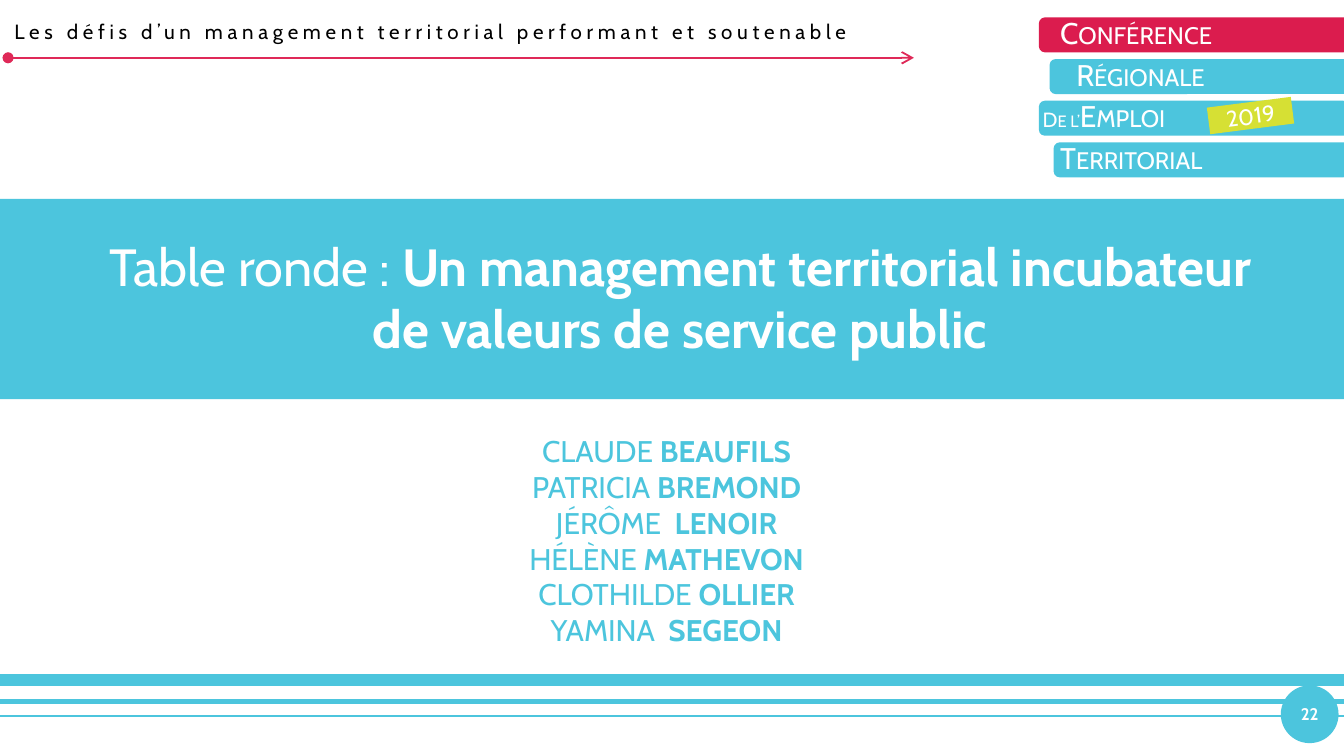
import pptx
import pptx.dml.color
import pptx.enum.shapes
import pptx.enum.text
import pptx.oxml.ns
import pptx.util
from dataclasses import dataclass
from lxml import etree

Inches = pptx.util.Inches
Shape = pptx.enum.shapes.MSO_SHAPE
Align = pptx.enum.text.PP_ALIGN
Anchor = pptx.enum.text.MSO_ANCHOR
qn = pptx.oxml.ns.qn


@dataclass(frozen=True)
class Theme:
    font: str = "Cabin"
    blue: str = "4CC5DD"
    red: str = "DB1C4E"
    arrow: str = "DF2958"
    lime: str = "D6E034"
    white: str = "FFFFFF"
    black: str = "000000"
    title: float = 28
    body: float = 16
    badge: float = 12
    small: float = 11
    number: float = 9


theme = Theme()


def write(para, parts, color, align=Align.LEFT, **attributes):
    """Fill a paragraph with (text, size, bold) spans."""
    para.alignment = align
    para.space_before = pptx.util.Pt(0)
    for text, size, bold in parts:
        span = para.add_run()
        span.text = text
        span.font.name = theme.font
        span.font.size = pptx.util.Pt(size)
        span.font.bold = bold
        span.font.color.rgb = pptx.dml.color.RGBColor.from_string(color)
        for name, value in attributes.items():
            span.font._element.set(name, value)


def add_block(kind, left, top, width, height, color):
    """Add a flat filled shape without an outline."""
    block = page.shapes.add_shape(
        kind, Inches(left), Inches(top), Inches(width), Inches(height))
    block.shadow.inherit = False
    block.fill.solid()
    block.fill.fore_color.rgb = pptx.dml.color.RGBColor.from_string(color)
    block.line.fill.background()
    return block


# Widescreen page, 16:9
deck = pptx.Presentation()
deck.slide_width, deck.slide_height = Inches(10), Inches(10 * 9 / 16)
page = deck.slides.add_slide(deck.slide_layouts[1])
title, speakers = page.shapes.title, page.placeholders[1]

# Footer rules and header arrow
rules = [
    (-0.12, 10.2, 5.06, 6, theme.blue),
    (-0.28, 10.04, 5.22, 2.25, theme.blue),
    (-0.11, 10.21, 5.33, 1, theme.blue),
    (0.06, 6.8, 0.43, 1, theme.arrow),
]
for start, end, y, weight, color in rules:
    rule = page.shapes.add_connector(
        pptx.enum.shapes.MSO_CONNECTOR.STRAIGHT,
        Inches(start), Inches(y), Inches(end), Inches(y))
    rule.line.width = pptx.util.Pt(weight)
    rule.line.color.rgb = pptx.dml.color.RGBColor.from_string(color)
    if color == theme.arrow:
        outline = rule.line._get_or_add_ln()
        etree.SubElement(outline, qn("a:headEnd"), type="oval")
        etree.SubElement(outline, qn("a:tailEnd"), type="arrow")
    etree.SubElement(rule._element.spPr, qn("a:effectLst"))

# Title band
band = add_block(Shape.ROUNDED_RECTANGLE, -0.35, 1.48, 10.71, 1.49, theme.blue)
band.adjustments[0] = 0.08

# Title and speakers, brought in front of the band
for holder, left, top, width, height in [
    (title, 0.56, 1.69, 9, 1.04),
    (speakers, 0.27, 3.17, 9.38, 1.85),
]:
    holder.left, holder.top = Inches(left), Inches(top)
    holder.width, holder.height = Inches(width), Inches(height)
    holder.text_frame.word_wrap = True
    holder.text_frame.auto_size = pptx.enum.text.MSO_AUTO_SIZE.NONE
    holder.text_frame.vertical_anchor = Anchor.TOP
    page.shapes.element.append(holder.element)

write(title.text_frame.paragraphs[0], [
    ("Table ronde : ", theme.title, False),
    ("Un management territorial incubateur de valeurs de service public",
     theme.title, True),
], theme.white, Align.CENTER)

names = [
    ("CLAUDE ", "BEAUFILS"),
    ("PATRICIA ", "BREMOND"),
    ("JÉRÔME  ", "LENOIR"),
    ("HÉLÈNE ", "MATHEVON"),
    ("CLOTHILDE ", "OLLIER"),
    ("YAMINA  ", "SEGEON"),
]
for index, (first, last) in enumerate(names):
    frame = speakers.text_frame
    para = frame.add_paragraph() if index else frame.paragraphs[0]
    write(para, [(first, theme.body, False), (last, theme.body, True)],
          theme.blue, Align.CENTER)
    properties = para._p.get_or_add_pPr()
    properties.set("marL", "0")
    properties.set("indent", "0")
    etree.SubElement(properties, qn("a:buNone"))

# Page number
disc = add_block(Shape.OVAL, 9.53, 5.1, 0.43, 0.43, theme.blue)
frame = disc.text_frame
frame.margin_left = frame.margin_right = frame.margin_top = frame.margin_bottom = 0
frame.vertical_anchor = Anchor.MIDDLE
write(frame.paragraphs[0], [("22", theme.number, True)], theme.white, Align.CENTER)

# Running header
header = page.shapes.add_textbox(Inches(0.01), Inches(0.09), Inches(7.2), Inches(0.29))
header.text_frame.word_wrap = True
write(header.text_frame.paragraphs[0], [
    ("Les défis d’un management territorial performant et soutenable",
     theme.small, False),
], theme.black, spc="250")

# Conference tabs: equal steps down, each running off the right edge
tabs = [
    (7.73, 7.79, theme.red, [("Conférence", theme.body, False)]),
    (7.81, 7.91, theme.blue, [("Régionale", theme.body, False)]),
    (7.73, 7.66, theme.blue,
     [("De l’", theme.small, False), ("Emploi", theme.body, False)]),
    (7.84, 7.79, theme.blue, [("Territorial", theme.body, False)]),
]
for index, (left, text_left, color, parts) in enumerate(tabs):
    top = 0.13 + index * 0.31
    add_block(Shape.ROUNDED_RECTANGLE, left, top, 10.04 - left, 0.26, color)
    label = page.shapes.add_textbox(
        Inches(text_left), Inches(top - 0.07), Inches(1.5), Inches(0.37))
    label.text_frame.word_wrap = True
    write(label.text_frame.paragraphs[0], parts, theme.white, cap="small")

# Year badge
badge = add_block(Shape.RECTANGLE, 8.99, 0.76, 0.63, 0.2, theme.lime)
badge.rotation = 352.7
badge.text_frame.vertical_anchor = Anchor.MIDDLE
write(badge.text_frame.paragraphs[0], [("2019", theme.badge, False)],
      theme.white, Align.CENTER)

deck.save("out.pptx")
